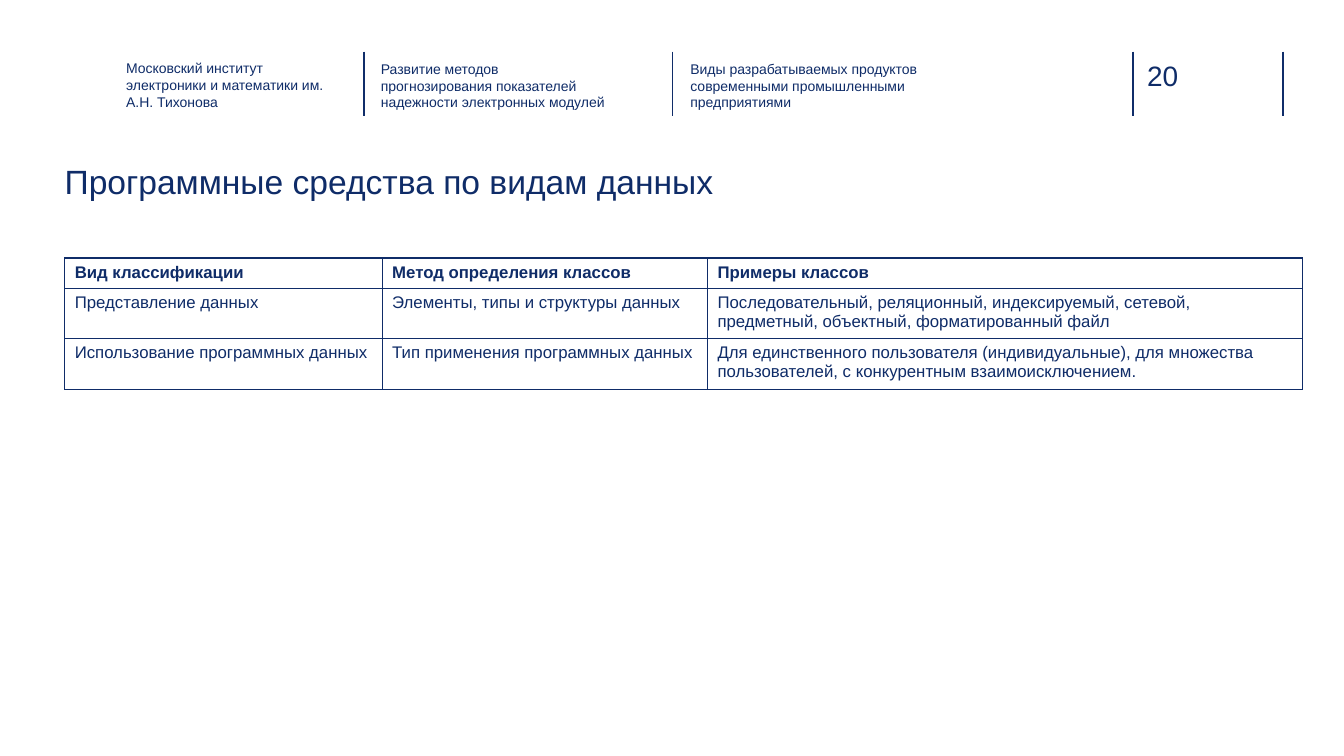
from lxml.etree import SubElement
from pptx import Presentation
from pptx.dml.color import RGBColor
from pptx.enum.shapes import MSO_CONNECTOR
from pptx.enum.text import MSO_ANCHOR
from pptx.oxml.ns import qn
from pptx.util import Cm, Pt

NAVY = RGBColor(0x0F, 0x2C, 0x68)
RULE_BLUE = RGBColor(0x10, 0x2D, 0x69)
FONT = "Arial"

# Content: text, left, top, width, height in cm, style
TEXTS = [
    ("Московский институт электроники и математики им. А.Н. Тихонова",
     3.18, 1.5, 5.28, 1.14, "header"),
    ("Развитие методов прогнозирования показателей надежности электронных модулей",
     9.6, 1.52, 5.74, 1.14, "header"),
    ("Виды разрабатываемых продуктов современными промышленными предприятиями",
     17.4, 1.52, 5.74, 1.14, "header"),
    ("20", 28.91, 1.47, 1.85, 0.86, "number"),
    ("Программные средства по видам данных", 1.63, 4.01, 19.3, 1.12, "title"),
]
STYLES = {
    "header": {"size": Pt(10), "spacing": Pt(12), "anchor": MSO_ANCHOR.TOP},
    "number": {"size": Pt(20), "spacing": 1.0, "anchor": MSO_ANCHOR.MIDDLE},
    "title": {"size": Pt(24), "spacing": 1.0, "anchor": MSO_ANCHOR.MIDDLE},
}
RULES_X = [9.17, 16.94, 28.55, 32.33]
RULE_TOP, RULE_BOTTOM = 1.3, 2.92

ROWS = [
    ("Вид классификации", "Метод определения классов", "Примеры классов"),
    ("Представление данных", "Элементы, типы и структуры данных",
     "Последовательный, реляционный, индексируемый, сетевой, предметный, "
     "объектный, форматированный файл"),
    ("Использование программных данных", "Тип применения программных данных",
     "Для единственного пользователя (индивидуальные), для множества "
     "пользователей, с конкурентным взаимоисключением."),
]
TABLE_LEFT, TABLE_TOP, ROW_HEIGHT = 1.63, 6.5, 0.43
COLUMN_WIDTHS = [8, 8.2, 14.99]


def set_font(paragraph, **extra):
    values = {"name": FONT, **extra}
    for name, value in values.items():
        setattr(paragraph.runs[0].font, name, value)
    paragraph.runs[0].font.color.rgb = NAVY


def add_borders(cell):
    properties = cell._tc.get_or_add_tcPr()
    for position, side in enumerate(("a:lnL", "a:lnR", "a:lnT", "a:lnB")):
        line = properties.makeelement(qn(side), {"w": str(Pt(1))})
        fill = SubElement(line, qn("a:solidFill"))
        SubElement(fill, qn("a:srgbClr"), val=str(NAVY))
        properties.insert(position, line)


def add_text(slide, text, left, top, width, height, style):
    box = slide.shapes.add_textbox(Cm(left), Cm(top), Cm(width), Cm(height))
    frame_format = {
        "word_wrap": True, "vertical_anchor": STYLES[style]["anchor"],
        "margin_left": 0, "margin_right": 0, "margin_top": 0, "margin_bottom": 0,
    }
    for name, value in frame_format.items():
        setattr(box.text_frame, name, value)
    paragraph = box.text_frame.paragraphs[0]
    paragraph.text = text
    paragraph.line_spacing = STYLES[style]["spacing"]
    set_font(paragraph, size=STYLES[style]["size"])


def add_rule(slide, x):
    rule = slide.shapes.add_connector(
        MSO_CONNECTOR.STRAIGHT, Cm(x), Cm(RULE_TOP), Cm(x), Cm(RULE_BOTTOM))
    rule.line.color.rgb = RULE_BLUE
    rule.line.width = Pt(1)
    SubElement(rule._element.spPr, qn("a:effectLst"))


def add_data_table(slide):
    table = slide.shapes.add_table(
        len(ROWS), len(COLUMN_WIDTHS), Cm(TABLE_LEFT), Cm(TABLE_TOP),
        Cm(sum(COLUMN_WIDTHS)), Cm(ROW_HEIGHT * len(ROWS))).table
    table.horz_banding = False
    for column, width in zip(table.columns, COLUMN_WIDTHS):
        column.width = Cm(width)
    for row_index, texts in enumerate(ROWS):
        table.rows[row_index].height = Cm(ROW_HEIGHT)
        for column_index, text in enumerate(texts):
            cell = table.cell(row_index, column_index)
            cell.text = text
            cell.fill.background()
            add_borders(cell)
            set_font(cell.text_frame.paragraphs[0],
                     size=Pt(12), bold=row_index == 0)


def main():
    presentation = Presentation()
    presentation.slide_width, presentation.slide_height = Cm(33.87), Cm(19.05)
    slide = presentation.slides.add_slide(presentation.slide_layouts[6])

    # Header rules
    for x in RULES_X:
        add_rule(slide, x)

    # Header texts, page number and title
    for entry in TEXTS:
        add_text(slide, *entry)

    # Classification table
    add_data_table(slide)

    presentation.save("out.pptx")


if __name__ == "__main__":
    main()
